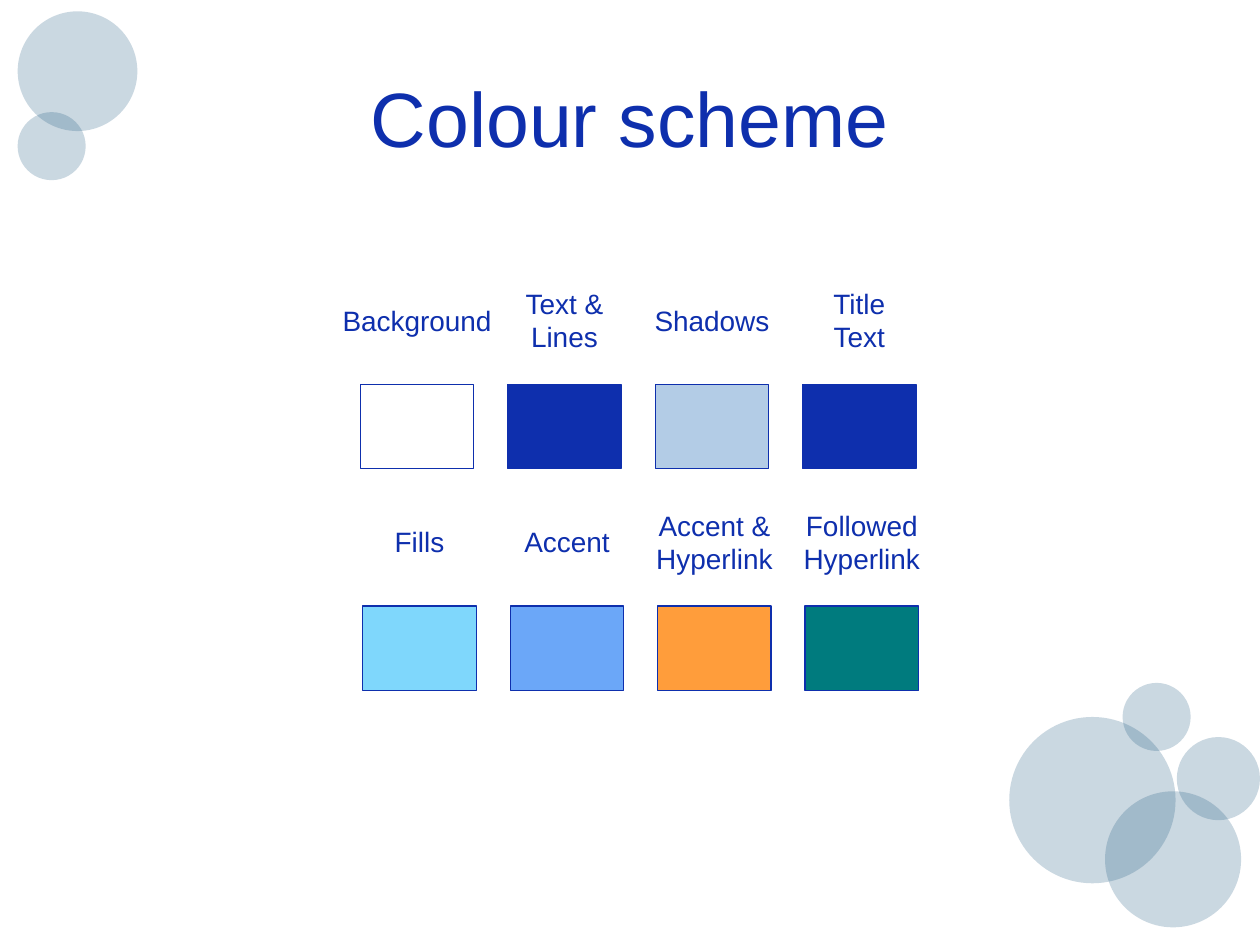
from lxml import etree
from pptx import Presentation, util as u
from pptx.dml.color import RGBColor
from pptx.enum import shapes, text

WIDE, HIGH = 10, 7.5
INK, MIST = "0E2FAD", "1D577E"
FONT = "Arial"
TITLE = "Colour scheme"

BUBBLES = [
    (0.14, 0.09, 0.95),
    (8.77, 6.28, 1.08),
    (9.34, 5.85, 0.66),
    (8.01, 5.69, 1.32),
    (8.91, 5.42, 0.54),
    (0.14, 0.89, 0.54),
]

ROWS = [
    (2.86, 3.05, [
        ("Background", 1.39, "FFFFFF"),
        ("Text &\nLines", 0.84, INK),
        ("Shadows", 1.12, "B3CCE6"),
        ("Title\vText", 0.63, INK),
    ]),
    (2.88, 4.81, [
        ("Fills", 0.6, "7FD7FC"),
        ("Accent", 0.88, "6BA7F8"),
        ("Accent &\nHyperlink", 1.13, "FF9D3B"),
        ("Followed\nHyperlink", 1.13, "007B7E"),
    ]),
]
STEP, SWATCH_W, SWATCH_H = 1.17, 0.9, 0.67
RISE, LINE_H, PAD = 0.51, 0.27, 0.1

prs = Presentation()
prs.slide_width, prs.slide_height = u.Inches(WIDE), u.Inches(HIGH)
slide = prs.slides.add_slide(prs.slide_layouts[6])


def color(code):
    return RGBColor.from_string(code)


def add_shape(kind, box, fill):
    shape = slide.shapes.add_shape(kind, *map(u.Inches, box))
    shape.shadow.inherit = False
    shape.fill.solid()
    shape.fill.fore_color.rgb = color(fill)
    return shape


def add_bubble(left, top, size):
    shape = add_shape(shapes.MSO_SHAPE.OVAL, (left, top, size, size), MIST)
    shape.line.fill.background()
    tint = shape.fill._xPr.solidFill[0]
    alpha = etree.SubElement(tint, tint.tag.replace("srgbClr", "alpha"))
    alpha.set("val", "23000")


def add_swatch(left, top, fill):
    box = (left, top, SWATCH_W, SWATCH_H)
    shape = add_shape(shapes.MSO_SHAPE.RECTANGLE, box, fill)
    shape.line.color.rgb = color(INK)
    shape.line.width = u.Pt(0.75)


def add_text(words, box, size, wrap):
    frame = slide.shapes.add_textbox(*map(u.Inches, box)).text_frame
    frame.text = words
    frame.word_wrap = wrap
    frame.vertical_anchor = text.MSO_ANCHOR.MIDDLE
    if not wrap:
        frame.auto_size = text.MSO_AUTO_SIZE.SHAPE_TO_FIT_TEXT
    for para in frame.paragraphs:
        para.alignment = text.PP_ALIGN.CENTER
        para.font.name = FONT
        para.font.size = u.Pt(size)
        para.font.color.rgb = color(INK)


def add_label(words, mid_x, mid_y, width):
    height = PAD + LINE_H * len(words.splitlines())
    box = (mid_x - width / 2, mid_y - height / 2, width, height)
    add_text(words, box, 16, False)


for bubble in BUBBLES:
    add_bubble(*bubble)

add_text(TITLE, (0.05 * WIDE, 0.04 * HIGH, 0.9 * WIDE, HIGH / 6), 44, True)

for start, top, cells in ROWS:
    for col, (words, width, fill) in enumerate(cells):
        left = start + col * STEP
        add_swatch(left, top, fill)
        add_label(words, left + SWATCH_W / 2, top - RISE, width)

prs.save("out.pptx")
